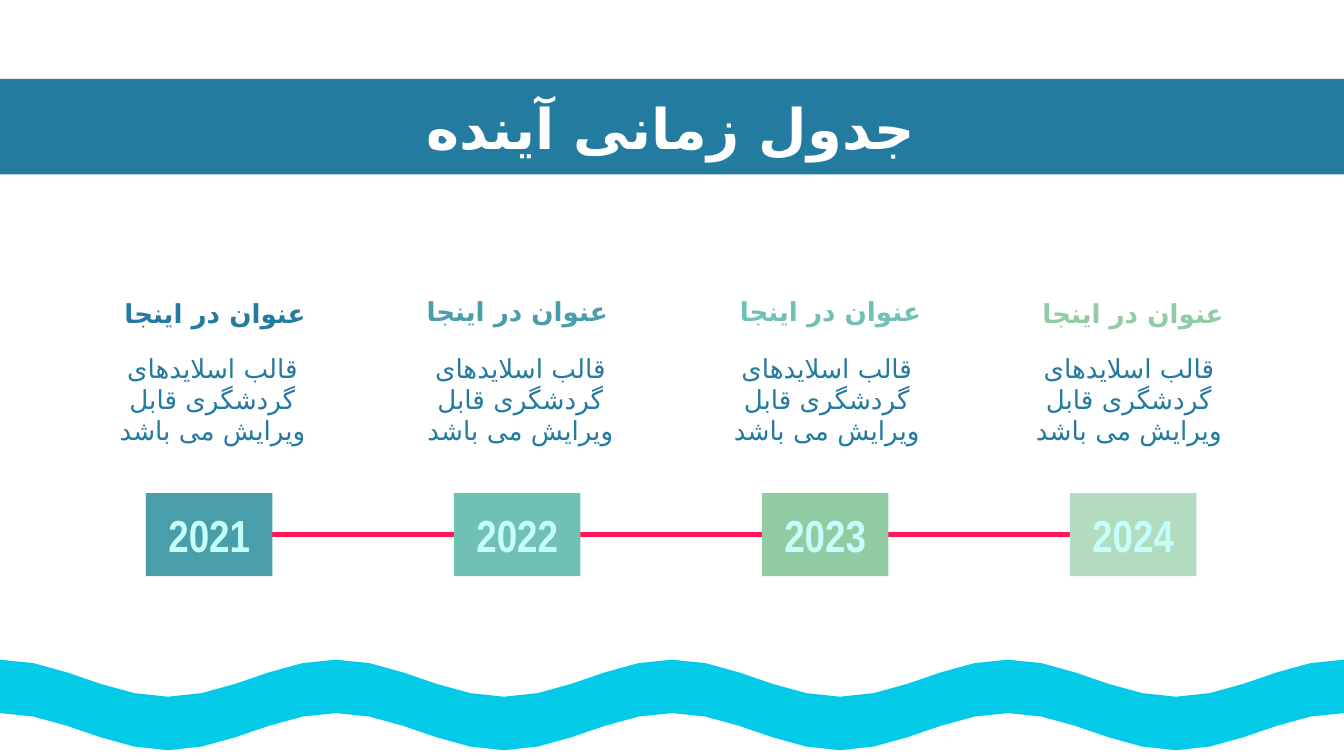
"""Build a four-year timeline slide above a wave."""
from dataclasses import dataclass
from math import cos, pi

from lxml.etree import SubElement
from pptx import Presentation
from pptx.dml.color import RGBColor
from pptx.enum.shapes import MSO_CONNECTOR, MSO_SHAPE
from pptx.enum.text import MSO_ANCHOR, MSO_AUTO_SIZE, PP_ALIGN
from pptx.oxml.ns import qn
from pptx.util import Cm, Pt


@dataclass(frozen=True)
class Theme:
    """Colours, fonts and type sizes of the slide."""
    blue: str = "247BA0"
    teal: str = "4A9EAA"
    aqua: str = "70C1B3"
    green: str = "90CBA3"
    pale_green: str = "B2DBBF"
    ice: str = "C4FFF9"
    white: str = "FFFFFF"
    pink: str = "FF1654"
    sea: str = "03CBE7"
    display_font: str = "Arial Narrow"
    text_font: str = "Karla"
    persian_font: str = "DejaVu Sans"
    title_size: int = 30
    year_size: int = 24
    text_size: int = 14


@dataclass(frozen=True)
class Milestone:
    """One year, its colours and the places of its texts."""
    year: str
    box_color: str
    heading_color: str
    heading_left: float
    heading_top: float
    body_left: float


THEME = Theme()
WIDTH, HEIGHT = 25.4, 14.29
TITLE = "جدول زمانی آینده"
HEADING = "عنوان در اینجا"
BODY = "قالب اسلایدهای گردشگری قابل ویرایش می باشد"
MILESTONES = (
    Milestone("2021", THEME.teal, THEME.blue, 1.88, 5.45, 1.83),
    Milestone("2022", THEME.aqua, THEME.teal, 7.59, 5.41, 7.65),
    Milestone("2023", THEME.green, THEME.aqua, 13.51, 5.41, 13.44),
    Milestone("2024", THEME.pale_green, THEME.green, 19.23, 5.45, 19.15),
)
BOX_LEFT, BOX_TOP, BOX_WIDTH, BOX_HEIGHT, BOX_STEP = 2.76, 9.32, 2.39, 1.57, 5.82
TEXT_WIDTH = 4.37


def write_text(shape, text, font, size, color, bold=False, right_to_left=True):
    """Put one centred paragraph into a shape."""
    frame = shape.text_frame
    frame.word_wrap = True
    frame.auto_size = MSO_AUTO_SIZE.NONE
    frame.vertical_anchor = MSO_ANCHOR.MIDDLE
    frame.margin_left = frame.margin_right = Cm(0.25)
    frame.margin_top = frame.margin_bottom = Cm(0.25)
    frame.text = text
    paragraph = frame.paragraphs[0]
    paragraph.alignment = PP_ALIGN.CENTER
    paragraph.font.name = font
    paragraph.font.size = Pt(size)
    paragraph.font.bold = bold
    paragraph.font.color.rgb = RGBColor.from_string(color)
    if right_to_left:
        properties = paragraph._p.get_or_add_pPr()
        properties.set("rtl", "1")
        SubElement(properties.find(qn("a:defRPr")), qn("a:cs"),
                   typeface=THEME.persian_font)


def paint(shape, color):
    """Give a shape a plain fill without line or shadow."""
    shape.shadow.inherit = False
    shape.fill.solid()
    shape.fill.fore_color.rgb = RGBColor.from_string(color)
    shape.line.fill.background()


def add_box(slide, left, top, width, height, color):
    """Add a plain rectangle."""
    box = slide.shapes.add_shape(
        MSO_SHAPE.RECTANGLE, Cm(left), Cm(top), Cm(width), Cm(height))
    paint(box, color)
    return box


def add_label(slide, left, top, height, text, color, bold=False):
    """Add a text box of the common column width."""
    label = slide.shapes.add_textbox(Cm(left), Cm(top), Cm(TEXT_WIDTH), Cm(height))
    write_text(label, text, THEME.text_font, THEME.text_size, color, bold)


def add_title(slide):
    """Place the title on a full-width band."""
    band = add_box(slide, 0, 1.49, WIDTH, 1.81, THEME.blue)
    title = slide.shapes.title
    title._element.addprevious(band._element)
    title.left, title.top = Cm(1.83), Cm(1.49)
    title.width, title.height = Cm(21.69), Cm(1.81)
    write_text(title, TITLE, THEME.display_font, THEME.title_size, THEME.white, True)


def add_axis(slide):
    """Draw the line that runs behind the year boxes."""
    middle = Cm(BOX_TOP + BOX_HEIGHT / 2)
    axis = slide.shapes.add_connector(
        MSO_CONNECTOR.STRAIGHT, Cm(3.48), middle, Cm(21.87), middle)
    axis.line.color.rgb = RGBColor.from_string(THEME.pink)
    axis.line.width = Pt(3)
    SubElement(axis._element.spPr, qn("a:effectLst"))


def add_milestone(slide, index, milestone):
    """Add the heading, description and year box of one column."""
    add_label(slide, milestone.heading_left, milestone.heading_top, 0.94, HEADING,
              milestone.heading_color, True)
    add_label(slide, milestone.body_left, 6.86, 1.37, BODY, THEME.blue)
    box = add_box(slide, BOX_LEFT + index * BOX_STEP, BOX_TOP,
                  BOX_WIDTH, BOX_HEIGHT, milestone.box_color)
    write_text(box, milestone.year, THEME.display_font, THEME.year_size,
               THEME.ice, True, right_to_left=False)


def add_wave(slide):
    """Draw a band of four cosine waves across the bottom."""
    middle, amplitude, thickness, steps, waves = 12.82, 0.35, 1.01, 40, 4
    upper = [(WIDTH * step / steps,
              middle - amplitude * cos(2 * pi * waves * step / steps))
             for step in range(steps + 1)]
    lower = [(x, y + thickness) for x, y in reversed(upper)]
    points = [(Cm(x), Cm(y)) for x, y in upper + lower]
    builder = slide.shapes.build_freeform(*points[0])
    builder.add_line_segments(points[1:], close=True)
    paint(builder.convert_to_shape(), THEME.sea)


def main():
    """Build and save the slide."""
    presentation = Presentation()
    presentation.slide_width, presentation.slide_height = Cm(WIDTH), Cm(HEIGHT)
    slide = presentation.slides.add_slide(presentation.slide_layouts[5])
    add_title(slide)
    add_axis(slide)
    for index, milestone in enumerate(MILESTONES):
        add_milestone(slide, index, milestone)
    add_wave(slide)
    presentation.save("out.pptx")


if __name__ == "__main__":
    main()
